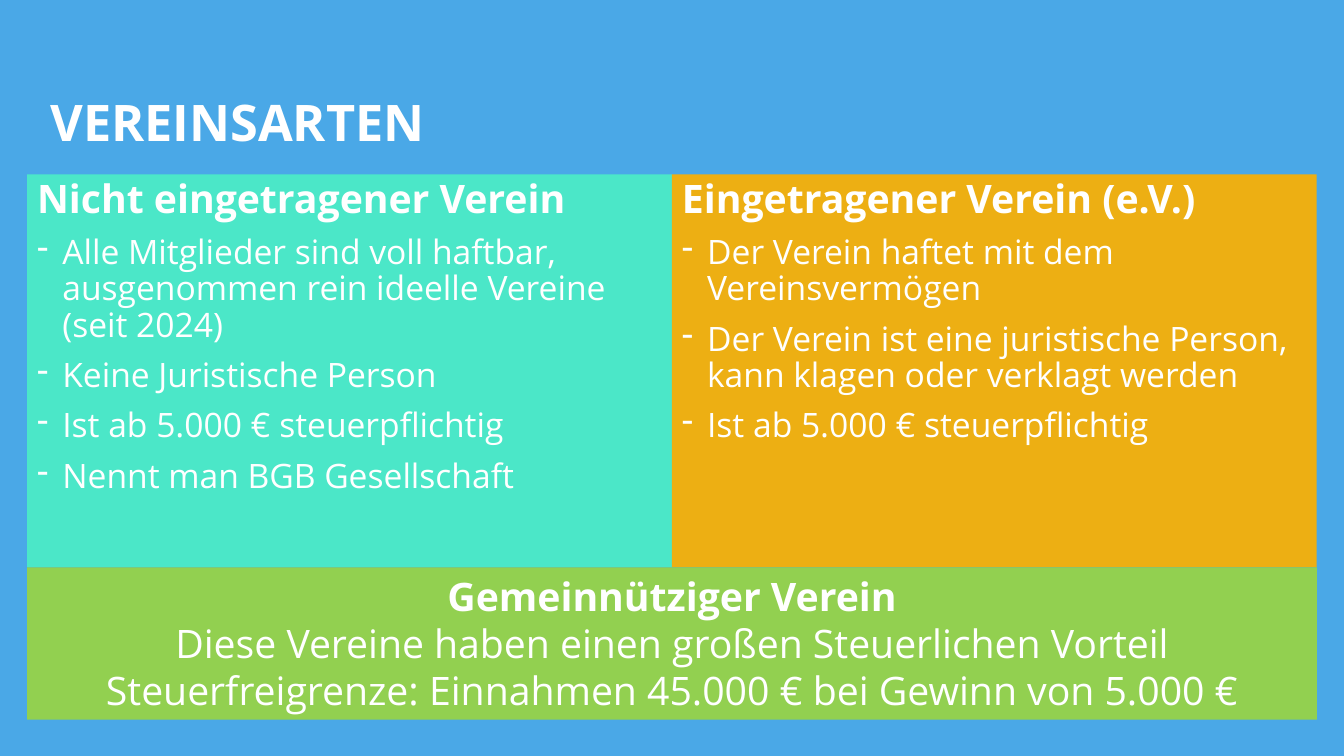
import pptx
import pptx.dml.color
import pptx.enum.shapes
import pptx.enum.text
import pptx.oxml
import pptx.oxml.ns
import pptx.util

Inches = pptx.util.Inches
Pt = pptx.util.Pt
Align = pptx.enum.text.PP_ALIGN
Anchor = pptx.enum.text.MSO_ANCHOR


def color(code):
    return pptx.dml.color.RGBColor.from_string(code)


class Deck:
    """Holds the style and the current slide, and draws its elements."""

    font = "Open Sans"
    ink = "FFFFFF"

    def __init__(self, back):
        self.show = pptx.Presentation()
        self.show.slide_width = Inches(13.33)
        self.show.slide_height = Inches(7.5)
        self.slide = self.show.slides.add_slide(self.show.slide_layouts[5])
        fill = self.slide.background.fill
        fill.solid()
        fill.fore_color.rgb = color(back)

    def words(self, para, text, size, bold=False, align=Align.LEFT):
        para.alignment = align
        run = para.add_run()
        run.text = text
        run.font.name = self.font
        run.font.size = Pt(size)
        run.font.bold = bold
        run.font.color.rgb = color(self.ink)

    def title(self, text, left, top, width, height):
        box = self.slide.shapes.title
        box.left, box.top = Inches(left), Inches(top)
        box.width, box.height = Inches(width), Inches(height)
        frame = box.text_frame
        frame.vertical_anchor = Anchor.MIDDLE
        self.words(frame.paragraphs[0], text, 36, True)

    def panel(self, fill, left, top, width, height, head, align=Align.LEFT):
        box = self.slide.shapes.add_shape(
            pptx.enum.shapes.MSO_SHAPE.RECTANGLE,
            Inches(left), Inches(top), Inches(width), Inches(height))
        box.shadow.inherit = False
        box.fill.solid()
        box.fill.fore_color.rgb = color(fill)
        box.line.fill.background()
        frame = box.text_frame
        frame.word_wrap = True
        frame.vertical_anchor = Anchor.TOP
        self.words(frame.paragraphs[0], head, 28, True, align)
        return frame

    def bullet(self, para):
        props = para._p.get_or_add_pPr()
        props.set("marL", str(Inches(0.25)))
        props.set("indent", str(-Inches(0.25)))
        mark = pptx.oxml.parse_xml(
            f'<a:buChar {pptx.oxml.ns.nsdecls("a")} char="-"/>')
        props.append(mark)
        para.space_before = Pt(10)
        para.line_spacing = 0.9

    def card(self, fill, left, top, width, height, head, points):
        frame = self.panel(fill, left, top, width, height, head)
        frame.paragraphs[0].line_spacing = 0.9
        for point in points:
            para = frame.add_paragraph()
            self.bullet(para)
            self.words(para, point, 24)

    def banner(self, fill, left, top, width, height, head, lines):
        frame = self.panel(fill, left, top, width, height, head, Align.CENTER)
        frame.auto_size = pptx.enum.text.MSO_AUTO_SIZE.SHAPE_TO_FIT_TEXT
        for line in lines:
            self.words(frame.add_paragraph(), line, 28, align=Align.CENTER)


def main():
    deck = Deck("4AA8E7")
    deck.title("VEREINSARTEN", 0.4, 0.66, 9.33, 1.09)
    left, top, width, height = 0.27, 1.73, 12.79, 3.9
    half = width / 2
    tax = "Ist ab 5.000 € steuerpflichtig"
    cards = [
        ("4BE7C8", "Nicht eingetragener Verein", [
            "Alle Mitglieder sind voll haftbar, ausgenommen rein ideelle "
            "Vereine (seit 2024)",
            "Keine Juristische Person",
            tax,
            "Nennt man BGB Gesellschaft"]),
        ("EDAF13", "Eingetragener Verein (e.V.)", [
            "Der Verein haftet mit dem Vereinsvermögen",
            "Der Verein ist eine juristische Person, kann klagen oder "
            "verklagt werden",
            tax]),
    ]
    for i, (fill, head, points) in enumerate(cards):
        deck.card(fill, left + i * half, top, half, height, head, points)
    deck.banner("92D050", left, top + height, width, 1.51,
                "Gemeinnütziger Verein", [
                    "Diese Vereine haben einen großen Steuerlichen Vorteil",
                    "Steuerfreigrenze: Einnahmen 45.000 € bei Gewinn von "
                    "5.000 €"])
    deck.show.save("out.pptx")


if __name__ == "__main__":
    main()
